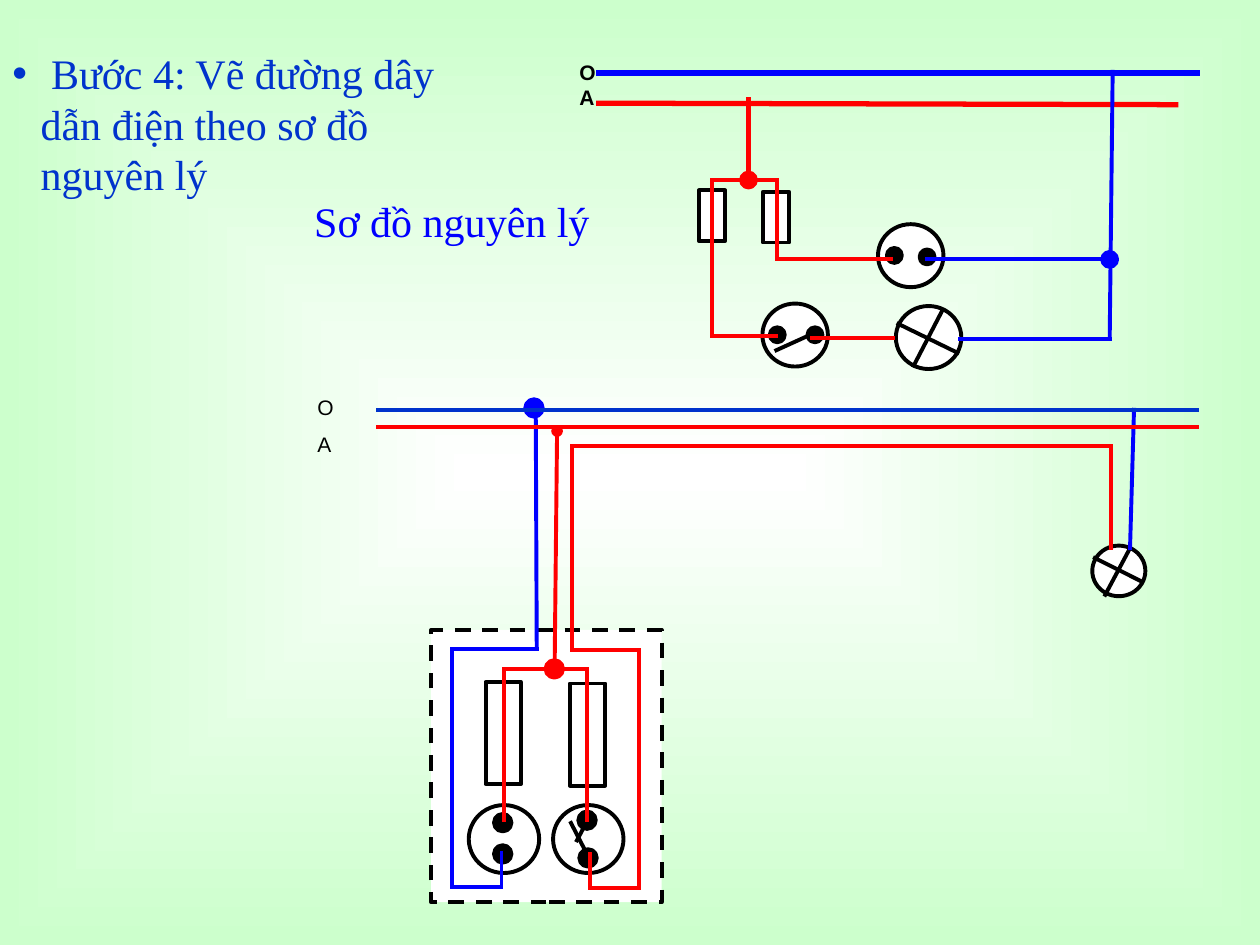
from lxml.etree import SubElement
from pptx import Presentation
from pptx.dml.color import RGBColor
from pptx.enum.dml import MSO_LINE
from pptx.enum.shapes import MSO_CONNECTOR, MSO_SHAPE
from pptx.enum.text import PP_ALIGN
from pptx.oxml.ns import qn
from pptx.util import Cm, Pt

COLORS = {
    "white": "FFFFFF", "mint": "CCFFCC", "black": "000000",
    "red": "FF0000", "blue": "0000FF", "navy": "0033CC",
}
RGB = {name: RGBColor.from_string(value) for name, value in COLORS.items()}

prs = Presentation()
prs.slide_width, prs.slide_height = Cm(25.4), Cm(19.05)
s = prs.slides.add_slide(prs.slide_layouts[6])


def add_part(kind, x, y, w, h, fill="white", line="black"):
    sp = s.shapes.add_shape(kind, Cm(x), Cm(y), Cm(w), Cm(h))
    sp.shadow.inherit = False
    sp.fill.solid()
    sp.fill.fore_color.rgb = RGB[fill]
    sp.line.color.rgb = RGB[line]
    sp.line.width = Pt(2.25)
    return sp


def add_wire(color, points, width=2.25, ends=None):
    for (x1, y1), (x2, y2) in zip(points, points[1:]):
        c = s.shapes.add_connector(MSO_CONNECTOR.STRAIGHT, Cm(x1), Cm(y1), Cm(x2), Cm(y2))
        c.line.color.rgb = RGB[color]
        c.line.width = Pt(width)
        SubElement(c._element.spPr, qn("a:effectLst"))
        ln = c.line._get_or_add_ln()
        if ends:
            for tag in ("a:headEnd", "a:tailEnd"):
                SubElement(ln, qn(tag), type=ends)
        else:
            ln.set("cap", "sq")  # closes the corners of bent wires


# Background: white centre fading to mint
fill = s.background.fill
fill.gradient()
for stop, name in zip(fill.gradient_stops, ("white", "mint")):
    stop.color.rgb = RGB[name]
grad = s._element.find(".//" + qn("a:gradFill"))
grad.remove(grad.find(qn("a:lin")))
shade = SubElement(grad, qn("a:path"), path="shape")
SubElement(shade, qn("a:fillToRect"), l="50000", t="50000", r="50000", b="50000")

# Switchboard
board = add_part(MSO_SHAPE.RECTANGLE, 8.69, 12.7, 4.65, 5.49)
board.line.dash_style = MSO_LINE.DASH

# Fuses
for x, y, w, h in [(14.09, 3.84, 0.53, 1.02), (15.38, 3.87, 0.53, 1.02),
                   (9.79, 13.75, 0.71, 2.06), (11.49, 13.78, 0.71, 2.06)]:
    add_part(MSO_SHAPE.RECTANGLE, x, y, w, h)

# Round bodies: outlet, switch and lamp of each diagram
for x, y, w, h in [(17.7, 4.52, 1.32, 1.27), (15.37, 6.12, 1.32, 1.27),
                   (18.06, 6.17, 1.32, 1.27), (9.45, 16.23, 1.42, 1.37),
                   (11.15, 16.23, 1.42, 1.37), (22.02, 11, 1.07, 1.02)]:
    add_part(MSO_SHAPE.OVAL, x, y, w, h)

# Lamp crosses and switch levers
for points in [[(18.11, 6.53), (19.3, 7.11)], [(19, 6.25), (18.42, 7.37)],
               [(22.07, 11.25), (22.99, 11.71)], [(22.78, 11.05), (22.28, 11.99)],
               [(16.31, 6.76), (15.65, 7.06)], [(11.86, 17.27), (11.51, 16.59)],
               [(11.63, 16.94), (11.86, 16.51)]]:
    add_wire("black", points)

# Terminals and junctions under the wires
for x, y, d, color in [(17.88, 5, 0.3, "black"), (18.54, 5.03, 0.3, "black"),
                       (15.52, 6.6, 0.3, "black"), (16.28, 6.6, 0.3, "black"),
                       (9.96, 16.41, 0.35, "black"), (9.96, 17.04, 0.35, "black"),
                       (11.66, 16.36, 0.35, "black"), (11.68, 17.12, 0.35, "black"),
                       (11, 13.31, 0.35, "red"), (10.59, 8.05, 0.35, "blue")]:
    add_part(MSO_SHAPE.OVAL, x, y, d, d, color, color)

# Wiring diagram
add_wire("blue", [(22.86, 8.26), (22.78, 11.05)])
add_wire("blue", [(10.8, 8.26), (10.82, 13.08), (9.12, 13.08), (9.12, 17.88),
                  (10.11, 17.88), (10.11, 17.2)])
add_wire("red", [(22.4, 11.05), (22.4, 8.99), (11.53, 8.99), (11.53, 13.11),
                 (12.88, 13.11), (12.88, 17.91), (11.89, 17.91), (11.89, 17.22)])
add_wire("red", [(11.23, 8.69), (11.18, 13.54)], ends="oval")
for x in (10.16, 11.84):
    add_wire("red", [(11.2, 13.49), (x, 13.49), (x, 16.54)])
add_wire("red", [(7.62, 8.61), (24.13, 8.61)])
add_wire("navy", [(7.62, 8.26), (24.13, 8.26)])

# Schematic diagram
add_wire("red", [(12.07, 2.08), (23.7, 2.11)], 3)
add_wire("red", [(15.09, 2.01), (15.09, 3.63)], 3)
add_wire("red", [(15.02, 3.63), (15.67, 3.63), (15.67, 5.22), (17.96, 5.22)])
add_wire("red", [(15.06, 3.63), (14.35, 3.63), (14.35, 6.78), (15.65, 6.78)])
add_wire("red", [(16.36, 6.81), (18.01, 6.81)])
add_wire("blue", [(18.69, 5.23), (22.35, 5.23)])
add_wire("blue", [(19.35, 6.83), (22.37, 6.83), (22.43, 1.45)])
add_wire("blue", [(12.07, 1.47), (24.13, 1.47)], 3)
for x, y, color in [(14.94, 3.48, "red"), (22.22, 5.08, "blue")]:
    add_part(MSO_SHAPE.OVAL, x, y, 0.3, 0.3, color, color)

# Texts: position, wording, size, font, colour, bold, alignment
texts = [
    (6.15, 7.82, 1.7, 1.52, "O\nA", 12, "Arial", "black", False, PP_ALIGN.LEFT),
    (11.43, 1.07, 0.84, 1.27, "O\vA", 12, "Arial", "black", True, PP_ALIGN.LEFT),
    (0, 0.84, 9.73, 3.3, " Bước 4: Vẽ đường dây dẫn điện theo sơ đồ nguyên lý",
     24, "Times New Roman", "navy", False, PP_ALIGN.LEFT),
    (5.72, 3.81, 6.78, 1.27, "Sơ đồ nguyên lý",
     24, "Times New Roman", "blue", False, PP_ALIGN.CENTER),
]
for x, y, w, h, text, size, font, color, bold, align in texts:
    tf = s.shapes.add_textbox(Cm(x), Cm(y), Cm(w), Cm(h)).text_frame
    tf.word_wrap = True
    tf.text = text
    for i, p in enumerate(tf.paragraphs):
        p.alignment = align
        if i:
            p.space_before = Pt(7)
        for r in p.runs:
            r.font.size, r.font.name, r.font.bold = Pt(size), font, bold
            r.font.color.rgb = RGB[color]
        if text.startswith(" Bước"):
            pPr = p._p.get_or_add_pPr()
            pPr.set("marL", str(Cm(0.57)))
            pPr.set("indent", str(-Cm(0.57)))
            SubElement(pPr, qn("a:buFont"), typeface="Arial")
            SubElement(pPr, qn("a:buChar"), char="•")

prs.save("out.pptx")
